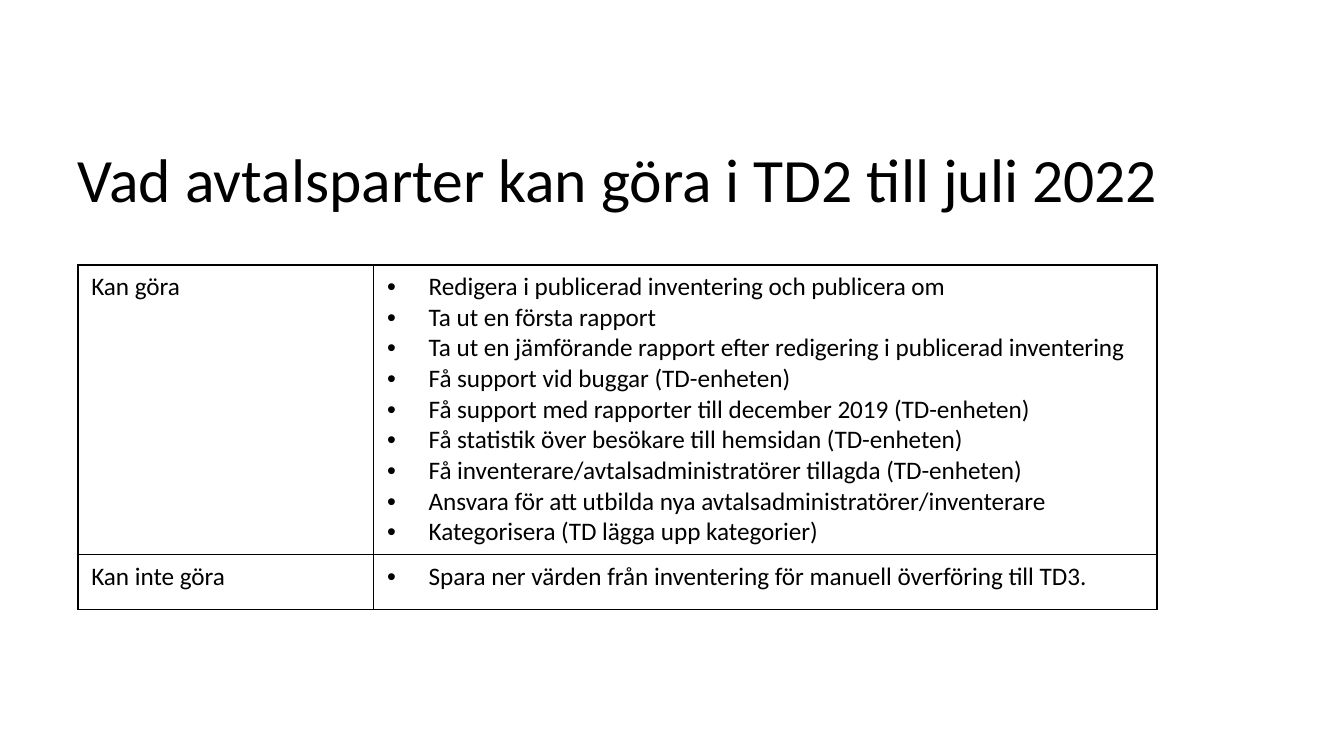
from lxml import etree
from pptx import Presentation
from pptx.dml.color import RGBColor
from pptx.enum.text import MSO_ANCHOR, MSO_AUTO_SIZE, PP_ALIGN
from pptx.oxml.ns import qn
from pptx.util import Inches, Pt

LEFT = PP_ALIGN.LEFT
MIDDLE = MSO_ANCHOR.MIDDLE
NO_AUTOFIT = MSO_AUTO_SIZE.NONE
TITLE_ONLY = 5
COLORS = {"ink": "000000"}
INDENT = Inches(0.31)

ROWS = [
    ("Kan göra", [
        "Redigera i publicerad inventering och publicera om",
        "Ta ut en första rapport",
        "Ta ut en jämförande rapport efter redigering i publicerad inventering",
        "Få support vid buggar (TD-enheten)",
        "Få support med rapporter till december 2019 (TD-enheten)",
        "Få statistik över besökare till hemsidan (TD-enheten)",
        "Få inventerare/avtalsadministratörer tillagda (TD-enheten)",
        "Ansvara för att utbilda nya avtalsadministratörer/inventerare",
        "Kategorisera (TD lägga upp kategorier)",
    ]),
    ("Kan inte göra", [
        "Spara ner värden från inventering för manuell överföring till TD3.",
    ]),
]


def set_font(paragraph, size):
    paragraph.font.name = "Calibri"
    paragraph.font.size = Pt(size)
    paragraph.font.color.rgb = RGBColor.from_string(COLORS["ink"])


def add_borders(cell):
    properties = cell._tc.get_or_add_tcPr()
    for side in ("lnL", "lnR", "lnT", "lnB"):
        line = etree.SubElement(properties, qn(f"a:{side}"), w=str(Pt(1)))
        fill = etree.SubElement(line, qn("a:solidFill"))
        etree.SubElement(fill, qn("a:srgbClr"), val=COLORS["ink"])


deck = Presentation()
deck.slide_width = Inches(10)
deck.slide_height = Inches(10 * 9 / 16)
page = deck.slides.add_slide(deck.slide_layouts[TITLE_ONLY])

title = page.shapes.title
title.left, title.top = Inches(0.58), Inches(0.79)
title.width, title.height = Inches(8.83), Inches(1.13)
frame = title.text_frame
frame.text = "Vad avtalsparter kan göra i TD2 till juli 2022"
frame.auto_size = NO_AUTOFIT
frame.word_wrap = True
frame.vertical_anchor = MIDDLE
frame.margin_left = frame.margin_top = frame.margin_right = frame.margin_bottom = 0
heading = frame.paragraphs[0]
heading.alignment = LEFT
heading.line_spacing = 0.9
set_font(heading, 33)

table = page.shapes.add_table(
    len(ROWS), 2, Inches(0.58), Inches(1.97), Inches(8.03), Inches(2.56)).table
table.first_row = table.horz_banding = False
for column, width in zip(table.columns, (2.2, 5.83)):
    column.width = Inches(width)
for row, height in zip(table.rows, (2.15, 0.41)):
    row.height = Inches(height)

for row, (label, items) in zip(table.rows, ROWS):
    label_cell, list_cell = row.cells
    label_cell.text = label
    list_cell.text = "\n".join(items)
    for paragraph in list_cell.text_frame.paragraphs:
        properties = paragraph._p.get_or_add_pPr()
        properties.set("marL", str(INDENT))
        properties.set("indent", str(-INDENT))
        etree.SubElement(properties, qn("a:buFont"), typeface="Arial")
        etree.SubElement(properties, qn("a:buChar"), char="•")
    for cell in row.cells:
        add_borders(cell)
        cell.fill.background()
        for paragraph in cell.text_frame.paragraphs:
            set_font(paragraph, 13.5)

deck.save("out.pptx")
